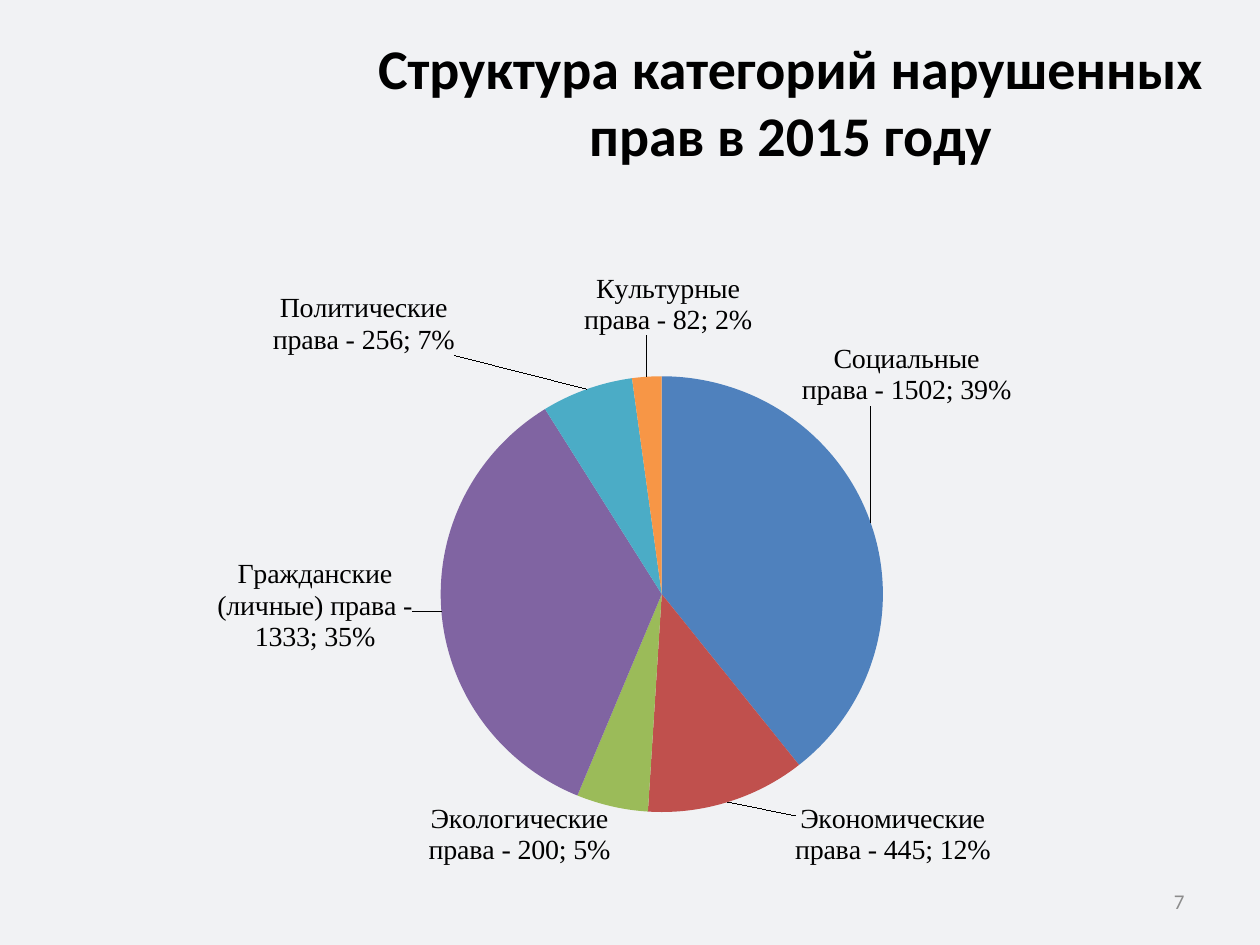
from lxml.etree import SubElement
from pptx import Presentation
from pptx.chart.data import CategoryChartData
from pptx.dml.color import RGBColor
from pptx.enum.chart import XL_CHART_TYPE, XL_LABEL_POSITION
from pptx.enum.text import MSO_ANCHOR, PP_ALIGN
from pptx.oxml.ns import qn
from pptx.util import Pt

# Content: category, value, slice colour, label shift (fractions of the chart)
TITLE = "Структура категорий нарушенных прав в 2015 году"
PAGE = "7"
RIGHTS = [
    ("Социальные права", 1502, "4F81BD", (-0.07, -0.17)),
    ("Экономические права", 445, "C0504D", (0.06, 0.01)),
    ("Экологические права", 200, "9BBB59", (0, 0)),
    ("Гражданские (личные) права", 1333, "8064A2", (-0.02, -0.01)),
    ("Политические права", 256, "4BACC6", (-0.12, -0.04)),
    ("Культурные права", 82, "F79646", (0.02, -0.05)),
]

THEME = {
    "background": "F1F2F4",
    "title": {"name": "Calibri", "size": Pt(32), "bold": True, "color": "000000"},
    "chart": {"name": "Calibri", "size": Pt(10), "color": "000000"},
    "label": {"name": "Times New Roman", "size": Pt(16), "bold": False, "color": "000000"},
    "page": {"name": "Calibri", "size": Pt(12), "color": "8C8C8C"},
}
TITLE_BOX = [Pt(v) for v in (205.2, 31, 493.2, 68.4)]
CHART_BOX = [Pt(v) for v in (50.4, 111.6, 618.5, 388.8)]
PAGE_BOX = [Pt(v) for v in (516.2, 500.4, 167.8, 28.8)]
PLOT = {"x": 0.2, "y": 0.27, "w": 0.66, "h": 0.65}


def style(font, role):
    for key, value in THEME[role].items():
        if key == "color":
            font.color.rgb = RGBColor.from_string(value)
        else:
            setattr(font, key, value)


def write(shape, text, role, align, anchor):
    frame = shape.text_frame
    frame.word_wrap = True
    frame.vertical_anchor = anchor
    paragraph = frame.paragraphs[0]
    paragraph.alignment = align
    run = paragraph.add_run()
    run.text = text
    style(run.font, role)


def place(parent, index, settings):
    """Give a chart part a manual layout."""
    for old in parent.findall(qn("c:layout")):
        parent.remove(old)
    layout = SubElement(parent, qn("c:layout"))
    manual = SubElement(layout, qn("c:manualLayout"))
    for key, value in settings.items():
        SubElement(manual, qn(f"c:{key}")).set("val", str(value))
    parent.insert(index, layout)


prs = Presentation()
prs.slide_width, prs.slide_height = Pt(720), Pt(540)
slide = prs.slides.add_slide(prs.slide_layouts[5])
slide.background.fill.solid()
slide.background.fill.fore_color.rgb = RGBColor.from_string(THEME["background"])

# Title
title = slide.shapes.title
title.left, title.top, title.width, title.height = TITLE_BOX
write(title, TITLE, "title", PP_ALIGN.CENTER, MSO_ANCHOR.BOTTOM)

# Pie chart
rights_data = CategoryChartData()
rights_data.categories = [name for name, *_ in RIGHTS]
rights_data.add_series("Series 1", [value for _, value, *_ in RIGHTS])
chart = slide.shapes.add_chart(XL_CHART_TYPE.PIE, *CHART_BOX, rights_data).chart
chart.has_legend = chart.has_title = False
style(chart.font, "chart")
pie = chart.plots[0]
pie.vary_by_categories = True
plot_area = chart.element.find(".//" + qn("c:plotArea"))
place(plot_area, 0, {"layoutTarget": "inner", "xMode": "edge", "yMode": "edge", **PLOT})

# Slices and their labels
series = pie.series[0]
labels = series.data_labels
labels.show_value = labels.show_percentage = labels.show_category_name = True
style(labels.font, "label")
total = sum(value for _, value, *_ in RIGHTS)
for i, (name, value, color, (dx, dy)) in enumerate(RIGHTS):
    point = series.points[i]
    point.format.fill.solid()
    point.format.fill.fore_color.rgb = RGBColor.from_string(color)
    label = point.data_label
    run = label.text_frame.paragraphs[0].add_run()
    run.text = f"{name} - {value}; {value / total:.0%}"
    style(run.font, "label")
    label.position = XL_LABEL_POSITION.OUTSIDE_END
    place(labels._element.findall(qn("c:dLbl"))[i], 1, {"x": dx, "y": dy})

# Page number
page = slide.shapes.add_textbox(*PAGE_BOX)
write(page, PAGE, "page", PP_ALIGN.RIGHT, MSO_ANCHOR.MIDDLE)

prs.save("out.pptx")
